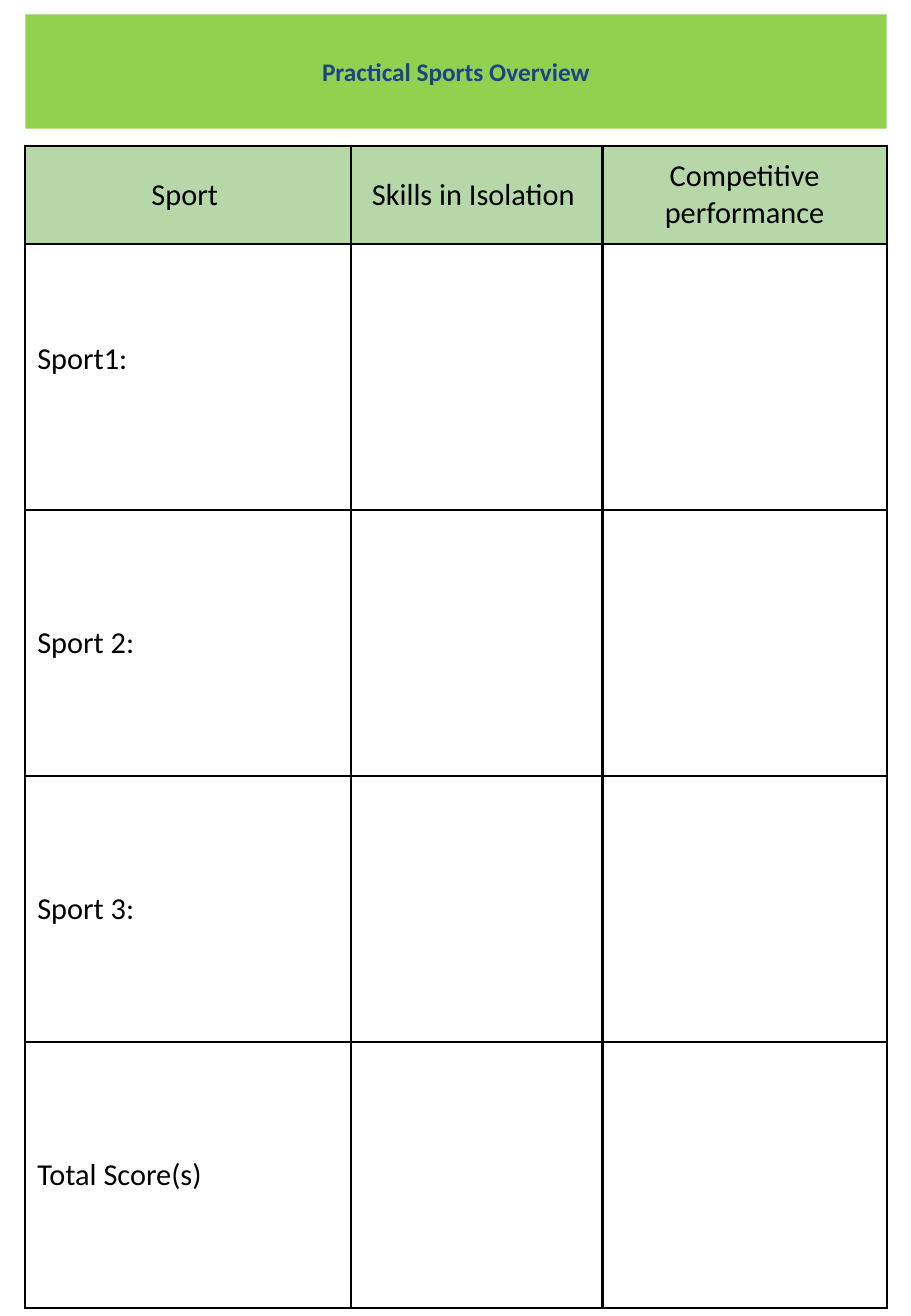
from lxml.etree import SubElement
from pptx import Presentation
from pptx.dml.color import RGBColor
from pptx.enum.text import MSO_ANCHOR as Anchor, MSO_AUTO_SIZE as AutoSize, PP_ALIGN as Align
from pptx.oxml.ns import qn
from pptx.util import Cm, Pt

FONT = "Calibri"
BLACK = RGBColor(0x00, 0x00, 0x00)
WHITE = RGBColor(0xFF, 0xFF, 0xFF)
NAVY = RGBColor(0x1C, 0x45, 0x87)
LIME = RGBColor(0x92, 0xD0, 0x50)
SAGE = RGBColor(0xB6, 0xD7, 0xA8)

LEFT, WIDTH = Cm(0.53), Cm(18.01)
COLUMN_WIDTHS = [Cm(6.81), Cm(5.26), Cm(5.94)]
HEADER_HEIGHT, ROW_HEIGHT = Cm(1.45), Cm(5.56)
CELL_MARGIN = Cm(0.25)
HEADERS = ["Sport ", "Skills in Isolation ", "Competitive performance"]
ROW_LABELS = ["Sport1:", "Sport 2:", "Sport 3:", "Total Score(s)"]


def style_text(para, size, color, bold=False):
    for span in para.runs:
        span.font.name = FONT
        span.font.size = Pt(size)
        span.font.bold = bold
        span.font.color.rgb = color


def add_borders(cell):
    properties = cell._tc.get_or_add_tcPr()
    for side in ("a:lnL", "a:lnR", "a:lnT", "a:lnB"):
        line = SubElement(properties, qn(side), w=str(Pt(1.5)))
        fill = SubElement(line, qn("a:solidFill"))
        SubElement(fill, qn("a:srgbClr"), val=str(BLACK))


deck = Presentation()
deck.slide_width, deck.slide_height = Cm(19.05), Cm(27.51)
page = deck.slides.add_slide(deck.slide_layouts[5])

# Title banner
title = page.shapes.title
title.left, title.top, title.width, title.height = LEFT, Cm(0.3), WIDTH, Cm(2.39)
title.fill.solid()
title.fill.fore_color.rgb = LIME
frame = title.text_frame
frame.text = "Practical Sports Overview"
frame.word_wrap = True
frame.auto_size = AutoSize.NONE
frame.vertical_anchor = Anchor.MIDDLE
heading = frame.paragraphs[0]
heading.alignment = Align.CENTER
heading.space_before = Pt(6.4)
style_text(heading, 15, NAVY, bold=True)

# Score table
rows = [HEADERS] + [[label, "", ""] for label in ROW_LABELS]
table_height = HEADER_HEIGHT + ROW_HEIGHT * len(ROW_LABELS)
table = page.shapes.add_table(len(rows), len(HEADERS), LEFT, Cm(3.05), WIDTH, table_height).table
for column, width in zip(table.columns, COLUMN_WIDTHS):
    column.width = width

for row_index, texts in enumerate(rows):
    is_header = row_index == 0
    table.rows[row_index].height = HEADER_HEIGHT if is_header else ROW_HEIGHT
    for column_index, text in enumerate(texts):
        cell = table.cell(row_index, column_index)
        add_borders(cell)
        cell.fill.solid()
        cell.fill.fore_color.rgb = SAGE if is_header else WHITE
        cell.vertical_anchor = Anchor.MIDDLE
        cell.margin_left = cell.margin_right = CELL_MARGIN
        cell.margin_top = cell.margin_bottom = CELL_MARGIN
        cell.text_frame.text = text
        para = cell.text_frame.paragraphs[0]
        para.alignment = Align.CENTER if is_header else Align.LEFT
        style_text(para, 18, BLACK)

# The first sport's label sits a little above the middle of its row
table.cell(1, 0).margin_bottom = CELL_MARGIN + Cm(0.76)

deck.save("out.pptx")
